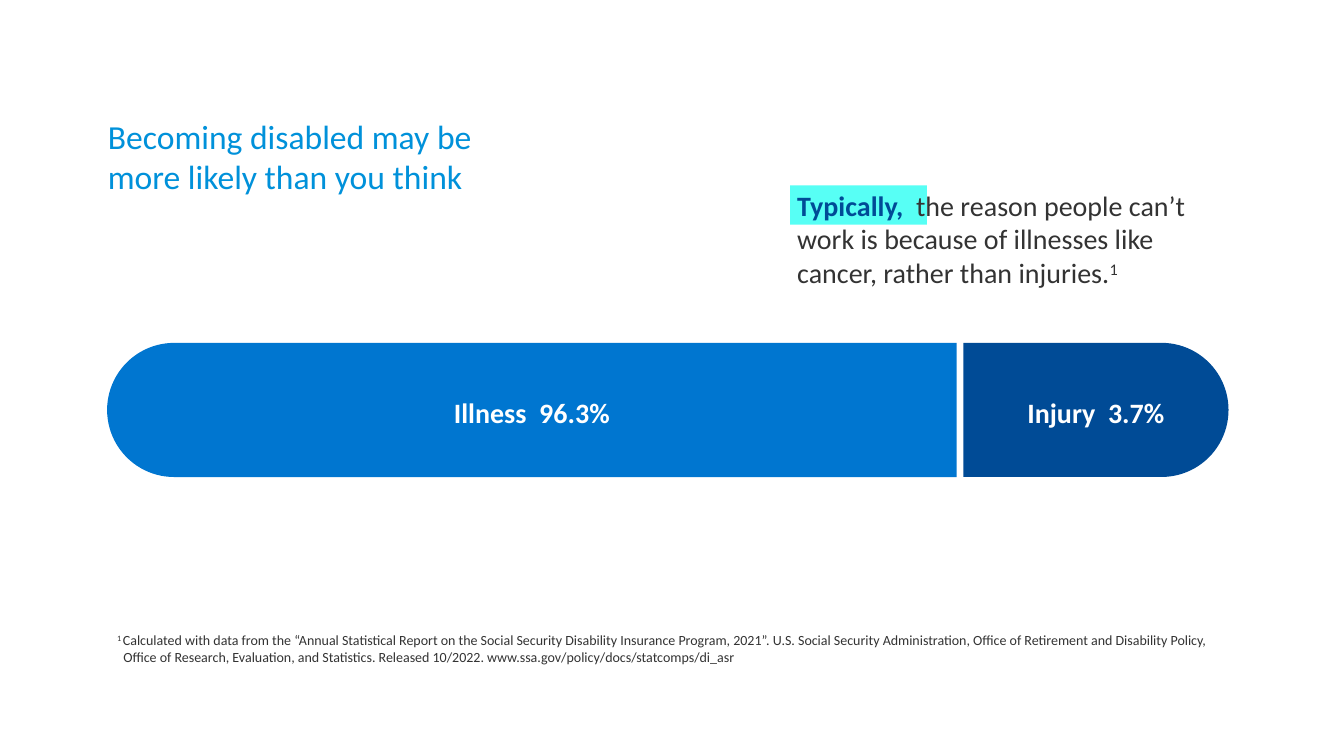
import pptx
import pptx.util
import pptx.dml.color
import pptx.enum.shapes
import pptx.enum.text

Cm = pptx.util.Cm
RGBColor = pptx.dml.color.RGBColor
SHAPES = pptx.enum.shapes.MSO_SHAPE
ALIGN = pptx.enum.text.PP_ALIGN
FIT = pptx.enum.text.MSO_AUTO_SIZE.SHAPE_TO_FIT_TEXT

SKY = RGBColor(0x00, 0x91, 0xDA)
AQUA = RGBColor(0x57, 0xFF, 0xF5)
BLUE = RGBColor(0x00, 0x76, 0xD0)
NAVY = RGBColor(0x00, 0x4B, 0x96)
GREY = RGBColor(0x33, 0x33, 0x33)
WHITE = RGBColor(0xFF, 0xFF, 0xFF)

BAR_LEFT, BAR_TOP, BAR_HEIGHT, BAR_GAP = 2.7, 8.64, 3.38, 0.17
BARS = [
    ("Illness  96.3%", 21.41, 270, BLUE),
    ("Injury  3.7%", 6.68, 90, NAVY),
]


class SlideBuilder:
    font_name = "Calibri"

    def __init__(self, slide):
        self.slide = slide

    def set_format(self, target, values):
        for name, value in values.items():
            setattr(target, name, value)

    def add_text(self, box, runs, frame_format=None, paragraph_format=None):
        shape = self.slide.shapes.add_textbox(*map(Cm, box))
        frame = shape.text_frame
        self.set_format(frame, {"word_wrap": True, **(frame_format or {})})
        paragraph = frame.paragraphs[0]
        self.set_format(paragraph, paragraph_format or {})
        for text, size, color, bold, raised in runs:
            for index, line in enumerate(text.split("\n")):
                if index:
                    paragraph.add_line_break()
                run = paragraph.add_run()
                run.text = line
                self.set_format(run.font, {
                    "name": self.font_name, "size": pptx.util.Pt(size), "bold": bold})
                run.font.color.rgb = color
                if raised:
                    run._r.get_or_add_rPr().set("baseline", "30000")
        return paragraph

    def add_block(self, kind, box, color, adjustments, rotation=0):
        shape = self.slide.shapes.add_shape(kind, *map(Cm, box))
        shape.shadow.inherit = False
        shape.rotation = rotation
        shape.fill.solid()
        shape.fill.fore_color.rgb = color
        shape.line.fill.background()
        for index, value in enumerate(adjustments):
            shape.adjustments[index] = value

    def add_bar(self, left, width, rotation, color):
        turned_left = left + (width - BAR_HEIGHT) / 2
        turned_top = BAR_TOP - (width - BAR_HEIGHT) / 2
        self.add_block(SHAPES.ROUND_2_SAME_RECTANGLE,
                       (turned_left, turned_top, BAR_HEIGHT, width),
                       color, (0.5, 0), rotation)

    def add_bar_label(self, left, width, text):
        self.add_text((left, 9.83, width, 1.17), [(text, 20, WHITE, True, False)],
                      paragraph_format={"alignment": ALIGN.CENTER,
                                        "space_after": pptx.util.Pt(12)})


def main():
    presentation = pptx.Presentation()
    presentation.slide_width = Cm(33.87)
    presentation.slide_height = Cm(19.05)
    builder = SlideBuilder(presentation.slides.add_slide(presentation.slide_layouts[6]))

    builder.add_text(
        (2.72, 2.92, 23.01, 2.06),
        [("Becoming disabled may be \nmore likely than you think", 24, SKY, False, False)],
        {"margin_left": 0, "margin_top": 0, "margin_bottom": 0, "auto_size": FIT})
    builder.add_block(SHAPES.ROUNDED_RECTANGLE, (19.91, 4.67, 3.45, 0.99), AQUA, (0,))
    builder.add_text(
        (19.84, 4.62, 11.1, 2.87),
        [("Typically,  ", 20, NAVY, True, False),
         ("the reason people can’t work is because of illnesses like cancer, "
          "rather than injuries.", 20, GREY, False, False),
         ("1", 20, GREY, False, True)],
        paragraph_format={"space_after": pptx.util.Pt(12)})

    left = BAR_LEFT
    for label, width, rotation, color in BARS:
        builder.add_bar(left, width, rotation, color)
        builder.add_bar_label(left, width, label)
        left += width + BAR_GAP

    footnote = builder.add_text(
        (2.7, 15.8, 28.4, 1.12),
        [("1 ", 10, GREY, False, True),
         ("Calculated with data from the “Annual Statistical Report on the Social Security "
          "Disability Insurance Program, 2021”. U.S. Social Security Administration, Office "
          "of Retirement and Disability Policy, Office of Research, Evaluation, and "
          "Statistics. Released 10/2022. www.ssa.gov/policy/docs/statcomps/di_asr",
          10, GREY, False, False)],
        {"auto_size": FIT}, {"space_after": pptx.util.Pt(6)})
    indent = Cm(0.16)
    properties = footnote._p.get_or_add_pPr()
    properties.set("marL", str(indent))
    properties.set("indent", str(-indent))

    presentation.save("out.pptx")


if __name__ == "__main__":
    main()
